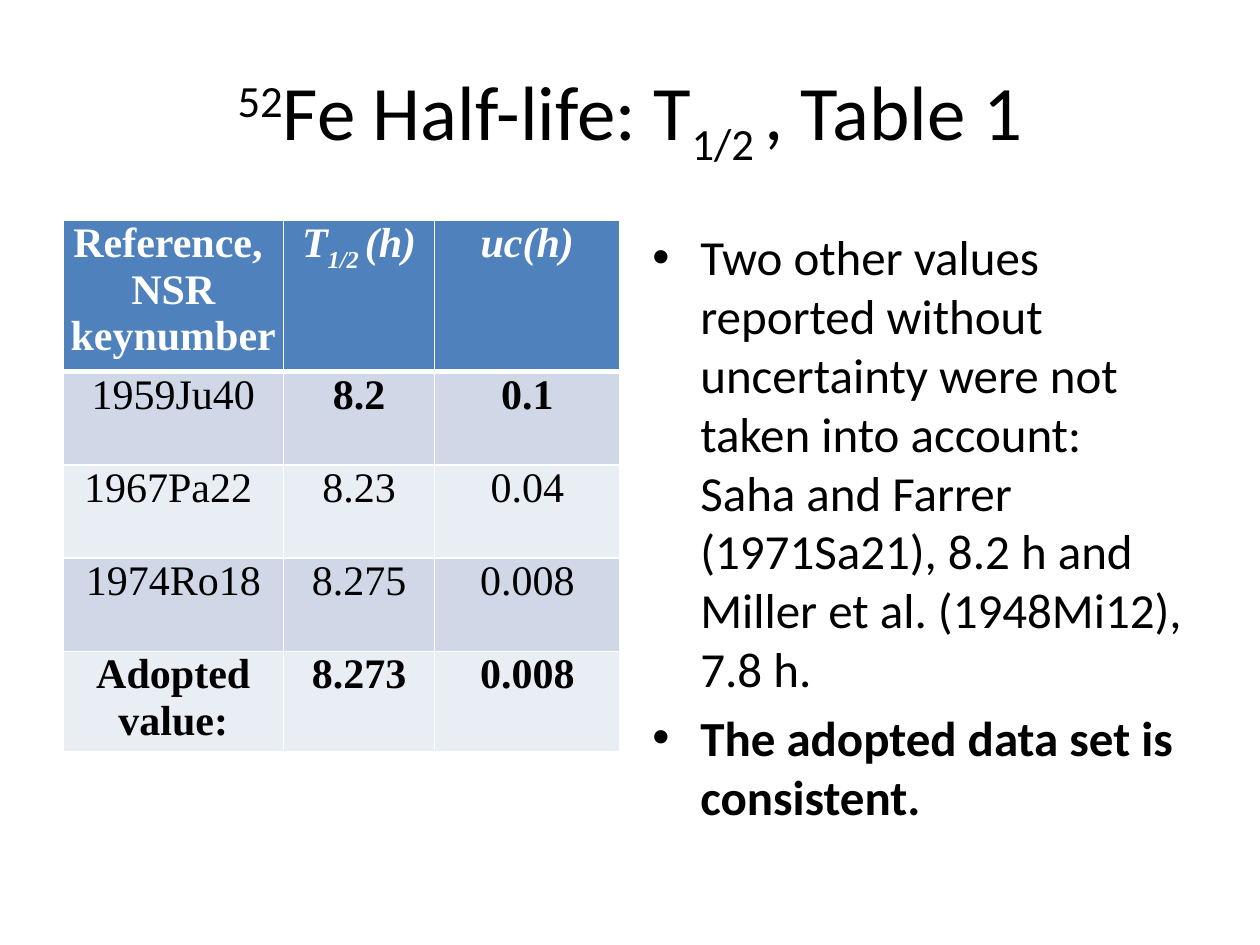
from pptx import Presentation
from pptx.dml.color import RGBColor
from pptx.enum.text import MSO_ANCHOR, PP_ALIGN
from pptx.oxml.xmlchemy import OxmlElement
from pptx.util import Inches, Pt

BLACK, WHITE, HEADER_BLUE = "000000", "FFFFFF", "4F81BD"
BANDS = ["D0D8E8", "E9EDF4"]
HALF_LIFE_SYMBOL = [("T", 0), ("1/2 ", -25)]  # (text, baseline shift in %)

HEADINGS = [
    [[("Reference, ", 0)], [("NSR keynumber", 0)]],
    [HALF_LIFE_SYMBOL + [("(h)", 0)]],
    [[("uc(h)", 0)]],
]
# (reference, half-life, uncertainty, bold columns)
MEASUREMENTS = [
    ("1959Ju40", "8.2", "0.1", {1, 2}),
    ("1967Pa22 ", "8.23", "0.04", set()),
    ("1974Ro18", "8.275", "0.008", set()),
    ("Adopted value:", "8.273", "0.008", {0, 1, 2}),
]
REMARKS = [
    ("Two other values reported without uncertainty were not taken into "
     "account: Saha and Farrer (1971Sa21), 8.2 h and Miller et al. "
     "(1948Mi12), 7.8 h.", False),
    ("The adopted data set is consistent.", True),
]


def rgb(value):
    return RGBColor.from_string(value)


def write_paragraph(paragraph, parts, face, size, color=BLACK, bold=False,
                    italic=False, align=PP_ALIGN.CENTER):
    paragraph.alignment = align
    font = paragraph.font
    font.name, font.size, font.bold, font.italic = face, Pt(size), bold, italic
    font.color.rgb = rgb(color)
    for text, shift in parts:
        run = paragraph.add_run()
        run.text = text
        if shift:
            run._r.get_or_add_rPr().set("baseline", str(shift * 1000))


def paragraphs_for(frame, count):
    return [frame.paragraphs[0]] + [frame.add_paragraph() for _ in range(count - 1)]


def add_borders(cell, top, bottom):
    """Draw white borders; they come before the fill in the cell properties."""
    properties = cell._tc.get_or_add_tcPr()
    for tag, width in (("a:lnL", 1), ("a:lnR", 1), ("a:lnT", top), ("a:lnB", bottom)):
        line = OxmlElement(tag)
        line.set("w", str(Pt(width)))
        fill = OxmlElement("a:solidFill")
        color = OxmlElement("a:srgbClr")
        color.set("val", WHITE)
        fill.append(color)
        line.append(fill)
        properties.append(line)


def fill_cell(cell, lines, fill, top=1, bottom=1, **style):
    cell.margin_left = cell.margin_right = Inches(0.04)
    cell.margin_top = cell.margin_bottom = 0
    add_borders(cell, top, bottom)
    cell.fill.solid()
    cell.fill.fore_color.rgb = rgb(fill)
    for paragraph, parts in zip(paragraphs_for(cell.text_frame, len(lines)), lines):
        write_paragraph(paragraph, parts, "Times New Roman", 24, **style)


def add_title(slide, left, top, width, height):
    frame = slide.shapes.add_textbox(left, top, width, height).text_frame
    frame.word_wrap = True
    frame.vertical_anchor = MSO_ANCHOR.MIDDLE
    parts = [("52", 30), ("Fe Half-life: ", 0), *HALF_LIFE_SYMBOL, (", Table 1", 0)]
    write_paragraph(frame.paragraphs[0], parts, "Calibri", 44)


def add_half_life_table(slide, left, top, width, height):
    table = slide.shapes.add_table(len(MEASUREMENTS) + 1, len(HEADINGS),
                                   left, top, width, height).table
    for column, share in zip(table.columns, (1.75, 1.2, 1.47)):
        column.width = Inches(share)
    header_height = Inches(1.1)
    for index, row in enumerate(table.rows):
        row.height = (header_height if index == 0
                      else int((height - header_height) / len(MEASUREMENTS)))

    # Header row, set off by a thick rule
    for column, lines in enumerate(HEADINGS):
        fill_cell(table.cell(0, column), lines, HEADER_BLUE, bottom=3,
                  color=WHITE, bold=True, italic=column > 0)

    # Measurements in alternating bands
    for index, (*values, bold_columns) in enumerate(MEASUREMENTS):
        for column, value in enumerate(values):
            fill_cell(table.cell(index + 1, column), [[(value, 0)]],
                      BANDS[index % 2], top=3 if index == 0 else 1,
                      bold=column in bold_columns)


def add_remarks(slide, left, top, width, height):
    frame = slide.shapes.add_textbox(left, top, width, height).text_frame
    frame.word_wrap = True
    for paragraph, (text, bold) in zip(paragraphs_for(frame, len(REMARKS)), REMARKS):
        write_paragraph(paragraph, [(text, 0)], "Calibri", 28, bold=bold,
                        align=PP_ALIGN.LEFT)
        paragraph.space_before = Pt(5.6)
        properties = paragraph._p.get_or_add_pPr()
        properties.set("marL", str(Inches(0.38)))
        properties.set("indent", str(-Inches(0.38)))
        bullet_font = OxmlElement("a:buFont")
        bullet_font.set("typeface", "Arial")
        bullet = OxmlElement("a:buChar")
        bullet.set("char", "•")
        # Bullets stand ahead of the default run properties
        default_run = properties.find(
            "{http://schemas.openxmlformats.org/drawingml/2006/main}defRPr")
        default_run.addprevious(bullet_font)
        default_run.addprevious(bullet)


def main():
    deck = Presentation()
    deck.slide_width, deck.slide_height = Inches(10), Inches(7.5)
    slide = deck.slides.add_slide(deck.slide_layouts[6])
    add_title(slide, Inches(0.5), Inches(0.3), Inches(9), Inches(1.25))
    add_half_life_table(slide, Inches(0.5), Inches(1.75), Inches(4.42), Inches(4.06))
    add_remarks(slide, Inches(5.08), Inches(1.75), Inches(4.42), Inches(4.95))
    deck.save("out.pptx")


if __name__ == "__main__":
    main()
